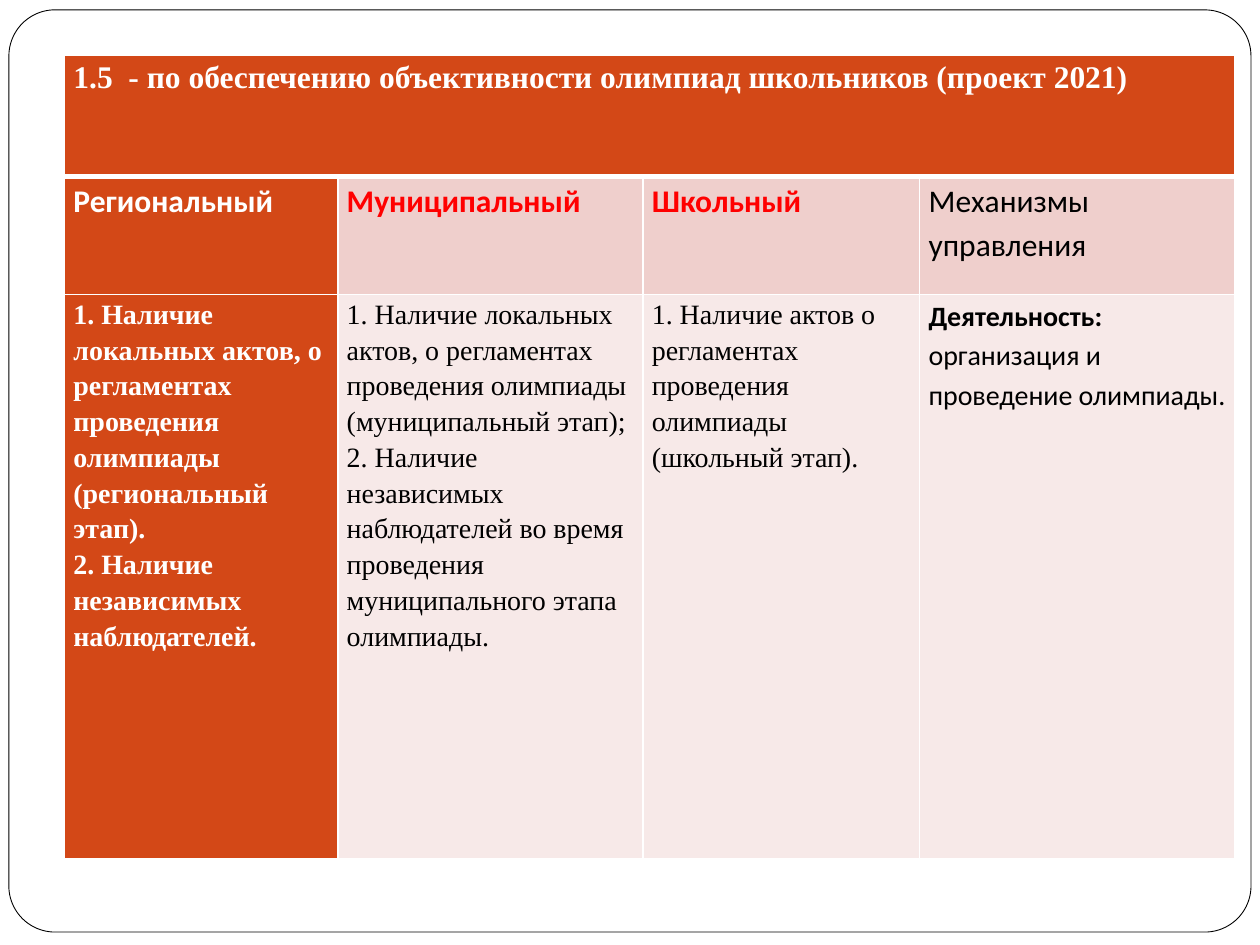
import pptx
import pptx.dml.color
import pptx.enum.shapes
import pptx.oxml
import pptx.oxml.ns
import pptx.util
from pptx.util import Cm, Pt

RGBColor = pptx.dml.color.RGBColor
WHITE = RGBColor(0xFF, 0xFF, 0xFF)
BLACK = RGBColor(0x00, 0x00, 0x00)
RED = RGBColor(0xFF, 0x00, 0x00)
ORANGE = RGBColor(0xD3, 0x48, 0x17)
ROSE = RGBColor(0xEF, 0xCF, 0xCC)
PALE_ROSE = RGBColor(0xF7, 0xE9, 0xE8)
SERIF, SANS = "Times New Roman", "Calibri"

# Content
TITLE = "1.5  - по обеспечению объективности олимпиад школьников (проект 2021)"
LEVELS = [
    ("Региональный", WHITE, True),
    ("Муниципальный", RED, True),
    ("Школьный", RED, True),
    ("Механизмы управления", BLACK, False),
]
MEASURES = [
    ["1. Наличие локальных актов, о регламентах проведения олимпиады (региональный этап).",
     "2. Наличие независимых наблюдателей."],
    ["1. Наличие локальных актов, о регламентах проведения олимпиады (муниципальный этап);",
     "2. Наличие независимых наблюдателей во время проведения муниципального этапа олимпиады."],
    ["1. Наличие актов о регламентах проведения олимпиады (школьный этап)."],
]
ACTIVITY = ("Деятельность: ", "организация и проведение олимпиады.")

COLUMN_WIDTHS = [5.51, 6.15, 5.58, 6.35]
ROW_HEIGHTS = [2.44, 2.38, 11.38]


def add_text(paragraph, text, *, font, size, color, bold=False):
    paragraph.line_spacing = 1.15
    span = paragraph.add_run()
    span.text = text
    span.font.name = font
    span.font.size = Pt(size)
    span.font.color.rgb = color
    span.font.bold = bold


def format_cell(cell, fill, top=1, bottom=1):
    cell.margin_left = cell.margin_right = Cm(0.18)
    cell.margin_top = cell.margin_bottom = 0
    cell.fill.solid()
    cell.fill.fore_color.rgb = fill
    # Borders must precede the fill in the cell properties
    properties = cell._tc.get_or_add_tcPr()
    for index, (side, width) in enumerate(
            [("L", 1), ("R", 1), ("T", top), ("B", bottom)]):
        properties.insert(index, pptx.oxml.parse_xml(
            f'<a:ln{side} {pptx.oxml.ns.nsdecls("a")} w="{Pt(width)}">'
            f'<a:solidFill><a:srgbClr val="{WHITE}"/></a:solidFill></a:ln{side}>'))


deck = pptx.Presentation()
deck.slide_width, deck.slide_height = Cm(25.4), Cm(19.05)
page = deck.slides.add_slide(deck.slide_layouts[6])

# Rounded page frame
frame = page.shapes.add_shape(
    pptx.enum.shapes.MSO_SHAPE.ROUNDED_RECTANGLE,
    Cm(0.18), Cm(0.2), Cm(25.04), Cm(18.59))
frame.adjustments[0] = 0.05
frame.shadow.inherit = False
frame.fill.solid()
frame.fill.fore_color.rgb = WHITE
frame.line.color.rgb = BLACK
frame.line.width = Pt(0.5)

# Table grid
table = page.shapes.add_table(
    len(ROW_HEIGHTS), len(COLUMN_WIDTHS), Cm(1.3), Cm(1.12),
    Cm(sum(COLUMN_WIDTHS)), Cm(sum(ROW_HEIGHTS))).table
table.first_row = table.horz_banding = False
for column, width in zip(table.columns, COLUMN_WIDTHS):
    column.width = Cm(width)
for row, height in zip(table.rows, ROW_HEIGHTS):
    row.height = Cm(height)
for number in range(len(COLUMN_WIDTHS)):
    format_cell(table.cell(0, number), ORANGE, bottom=3)
    format_cell(table.cell(1, number), ROSE if number else ORANGE, top=3)
    format_cell(table.cell(2, number), PALE_ROSE if number else ORANGE)

# Title row
title = table.cell(0, 0)
title.merge(table.cell(0, len(COLUMN_WIDTHS) - 1))
add_text(title.text_frame.paragraphs[0], TITLE,
         font=SERIF, size=18, color=WHITE, bold=True)

# Level names
for number, (name, color, bold) in enumerate(LEVELS):
    add_text(table.cell(1, number).text_frame.paragraphs[0], name,
             font=SANS, size=18, color=color, bold=bold)

# Measures for each level
for number, items in enumerate(MEASURES):
    body = table.cell(2, number).text_frame
    for position, item in enumerate(items):
        paragraph = body.add_paragraph() if position else body.paragraphs[0]
        add_text(paragraph, item, font=SERIF, size=16,
                 color=BLACK if number else WHITE, bold=number == 0)

# Management activity
activity = table.cell(2, len(MEASURES)).text_frame.paragraphs[0]
for position, text in enumerate(ACTIVITY):
    add_text(activity, text, font=SANS, size=16, color=BLACK, bold=position == 0)

deck.save("out.pptx")
